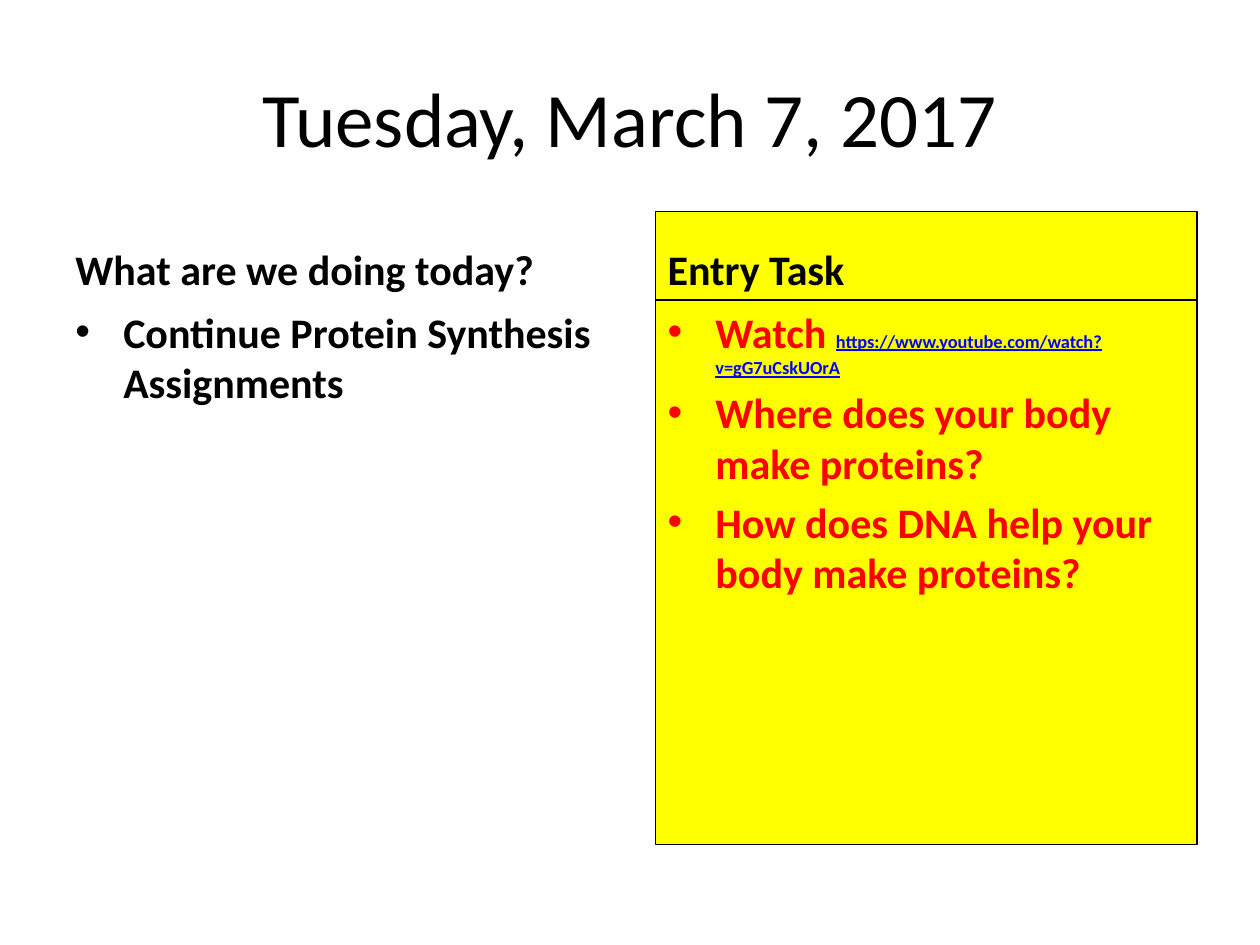
import pptx
import pptx.dml.color
import pptx.enum.shapes
import pptx.enum.text
import pptx.oxml.ns
import pptx.util
from lxml import etree

Inches, Pt = pptx.util.Inches, pptx.util.Pt
RGBColor = pptx.dml.color.RGBColor
ANCHOR = pptx.enum.text.MSO_ANCHOR
ALIGN = pptx.enum.text.PP_ALIGN

BLACK = RGBColor(0, 0, 0)
RED = RGBColor(0xFF, 0, 0)
BLUE = RGBColor(0, 0, 0xFF)
YELLOW = RGBColor(0xFF, 0xFF, 0)


class Deck:
    font = "Calibri"
    size = 24
    indent = Inches(0.38)
    gap = Pt(4.8)

    def __init__(self, width, height):
        self.prs = pptx.Presentation()
        self.prs.slide_width, self.prs.slide_height = Inches(width), Inches(height)
        self.s = None

    def add_slide(self):
        self.s = self.prs.slides.add_slide(self.prs.slide_layouts[6])

    def box(self, left, top, width, height, fill=None, anchor=ANCHOR.TOP):
        """Add a plain text box, or an outlined rectangle when filled."""
        at = [Inches(v) for v in (left, top, width, height)]
        if fill is None:
            sp = self.s.shapes.add_textbox(*at)
        else:
            sp = self.s.shapes.add_shape(pptx.enum.shapes.MSO_SHAPE.RECTANGLE, *at)
            sp.shadow.inherit = False
            sp.fill.solid()
            sp.fill.fore_color.rgb = fill
            sp.line.color.rgb = BLACK
            sp.line.width = Pt(0.75)
        tf = sp.text_frame
        tf.word_wrap = True
        tf.vertical_anchor = anchor
        return tf

    def run(self, p, text, color=BLACK, size=size, bold=True, underline=None):
        r = p.add_run()
        r.text = text
        f = r.font
        f.name, f.size, f.bold, f.underline = self.font, Pt(size), bold, underline
        f.color.rgb = color

    def line(self, tf, text, align=ALIGN.LEFT, **style):
        p = tf.paragraphs[0]
        p.alignment = align
        self.run(p, text, **style)

    def bullets(self, tf, items, color):
        """Each item is a list of (text, style overrides) runs."""
        for i, runs in enumerate(items):
            p = tf.add_paragraph() if i else tf.paragraphs[0]
            p.alignment = ALIGN.LEFT
            if i:
                p.space_before = self.gap
            ppr = p._p.get_or_add_pPr()
            ppr.set("marL", str(self.indent))
            ppr.set("indent", str(-self.indent))
            qn = pptx.oxml.ns.qn
            etree.SubElement(ppr, qn("a:buFont"), typeface="Arial")
            etree.SubElement(ppr, qn("a:buChar"), char="•")
            for text, style in runs:
                self.run(p, text, **{"color": color, **style})


def main():
    deck = Deck(10, 7.5)
    deck.add_slide()

    # Title
    tf = deck.box(0.5, 0.3, 9, 1.25, anchor=ANCHOR.MIDDLE)
    deck.line(tf, "Tuesday, March 7, 2017", ALIGN.CENTER, size=44, bold=False)

    # Two columns, each with a heading above a bullet list
    link = {"color": BLUE, "size": 10.5, "underline": True}
    columns = [
        (0.5, 4.42, None, "What are we doing today?", BLACK,
         [[("Continue Protein Synthesis Assignments", {})]]),
        (5.2, 4.3, YELLOW, "Entry Task", RED,
         [[("Watch ", {}), ("https://www.youtube.com/watch?v=gG7uCskUOrA", link)],
          [("Where does your body make proteins?", {})],
          [("How does DNA help your body make proteins?", {})]]),
    ]
    for left, width, fill, heading, color, items in columns:
        deck.line(deck.box(left, 1.68, width, 0.7, fill, ANCHOR.BOTTOM), heading)
        deck.bullets(deck.box(left, 2.38, width, 4.32, fill), items, color)

    deck.prs.save("out.pptx")


if __name__ == "__main__":
    main()
